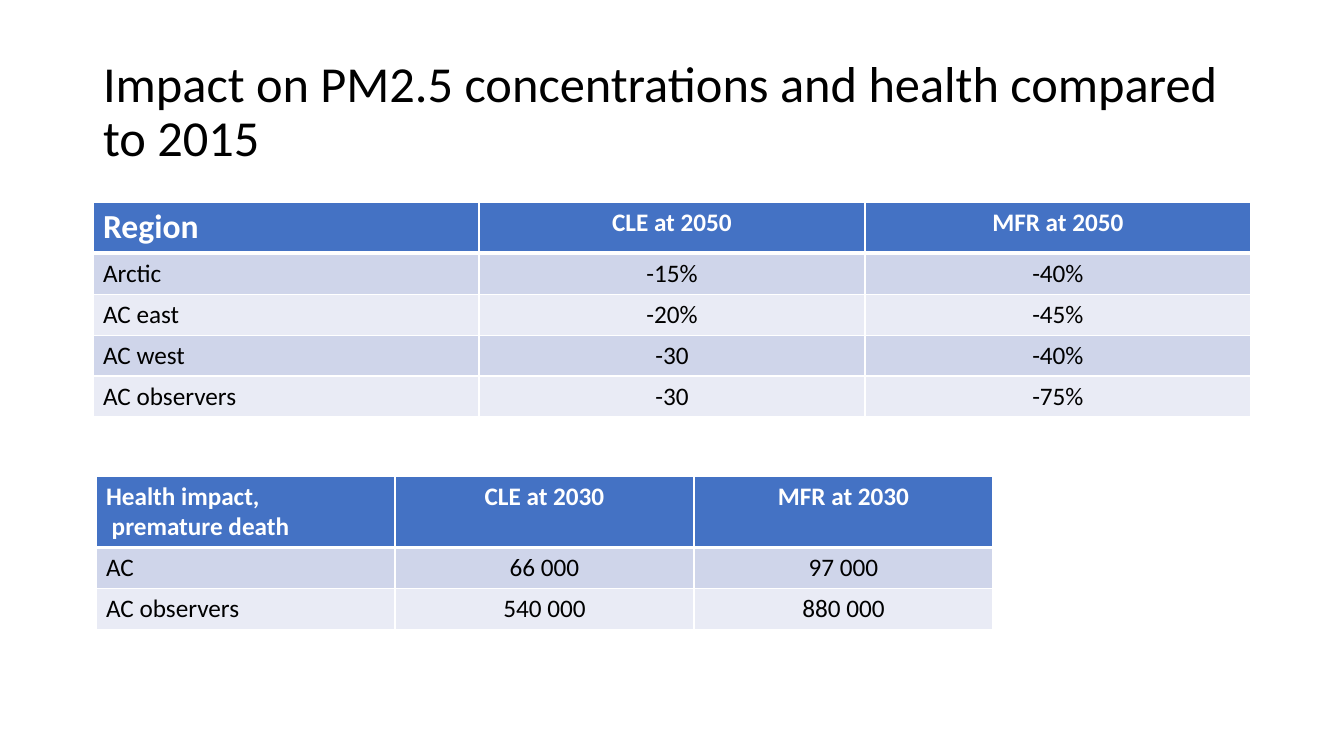
from pptx import Presentation
from pptx import util as u
from pptx.dml.color import RGBColor
from pptx.enum import text
from pptx.oxml import parse_xml
from pptx.oxml.ns import nsdecls

# Content
TITLE = "Impact on PM2.5 concentrations and health compared to 2015"
TABLES = [
    dict(left=93, top=202, col=386, head=50, size=24, rows=[
        ("Region", "CLE at 2050", "MFR at 2050"),
        ("Arctic", "-15%", "-40%"),
        ("AC east", "-20%", "-45%"),
        ("AC west", "-30", "-40%"),
        ("AC observers", "-30", "-75%"),
    ]),
    dict(left=96, top=476, col=299, head=71, size=18, rows=[
        ("Health impact,\n premature death", "CLE at 2030", "MFR at 2030"),
        ("AC", "66 000", "97 000"),
        ("AC observers", "540 000", "880 000"),
    ]),
]
ROW = 41
HEAD, BANDS = "4472C4", ("CFD5EA", "E9EBF5")
WHITE, BLACK = "FFFFFF", "000000"


def px(n):
    return u.Emu(round(n * 914400 / 100.8))


def rgb(code):
    return RGBColor.from_string(code)


def style(par, size, color, bold=False, align=text.PP_ALIGN.LEFT):
    par.alignment = align
    font = par.font
    font.name, font.size, font.bold = "Calibri", u.Pt(size), bold
    font.color.rgb = rgb(color)


def border(cell, base):
    """White lines on all four sides, ahead of the cell's fill."""
    props = cell._tc.get_or_add_tcPr()
    for i, (side, width) in enumerate(zip("LRTB", (1, 1, 1, base))):
        props.insert(i, parse_xml(
            f'<a:ln{side} {nsdecls("a")} w="{u.Pt(width)}"><a:solidFill>'
            f'<a:srgbClr val="{WHITE}"/></a:solidFill></a:ln{side}>'))


def add_grid(slide, left, top, col, head, size, rows):
    count, wide = len(rows), len(rows[0])
    high = head + ROW * (count - 1)
    grid = slide.shapes.add_table(
        count, wide, px(left), px(top), px(col * wide), px(high)).table
    for c in grid.columns:
        c.width = px(col)
    for r, row in enumerate(rows):
        grid.rows[r].height = px(ROW if r else head)
        for c, words in enumerate(row):
            cell = grid.cell(r, c)
            cell.text = words
            cell.fill.solid()
            cell.fill.fore_color.rgb = rgb(BANDS[(r - 1) % 2] if r else HEAD)
            border(cell, 1 if r else 3)
            for par in cell.text_frame.paragraphs:
                style(par, 18 if r or c else size, BLACK if r else WHITE, r == 0,
                      text.PP_ALIGN.CENTER if c else text.PP_ALIGN.LEFT)


def main():
    deck = Presentation()
    deck.slide_width, deck.slide_height = px(1344), px(756)
    slide = deck.slides.add_slide(deck.slide_layouts[5])

    # Title
    title = slide.shapes.title
    title.left, title.top, title.width, title.height = map(px, (93, 40, 1159, 146))
    frame = title.text_frame
    frame.text = TITLE
    frame.word_wrap = True
    frame.auto_size = text.MSO_AUTO_SIZE.NONE
    frame.vertical_anchor = text.MSO_ANCHOR.MIDDLE
    style(frame.paragraphs[0], 36, BLACK)
    frame.paragraphs[0].line_spacing = 0.9

    # Tables
    for item in TABLES:
        add_grid(slide, **item)

    deck.save("out.pptx")


if __name__ == "__main__":
    main()
